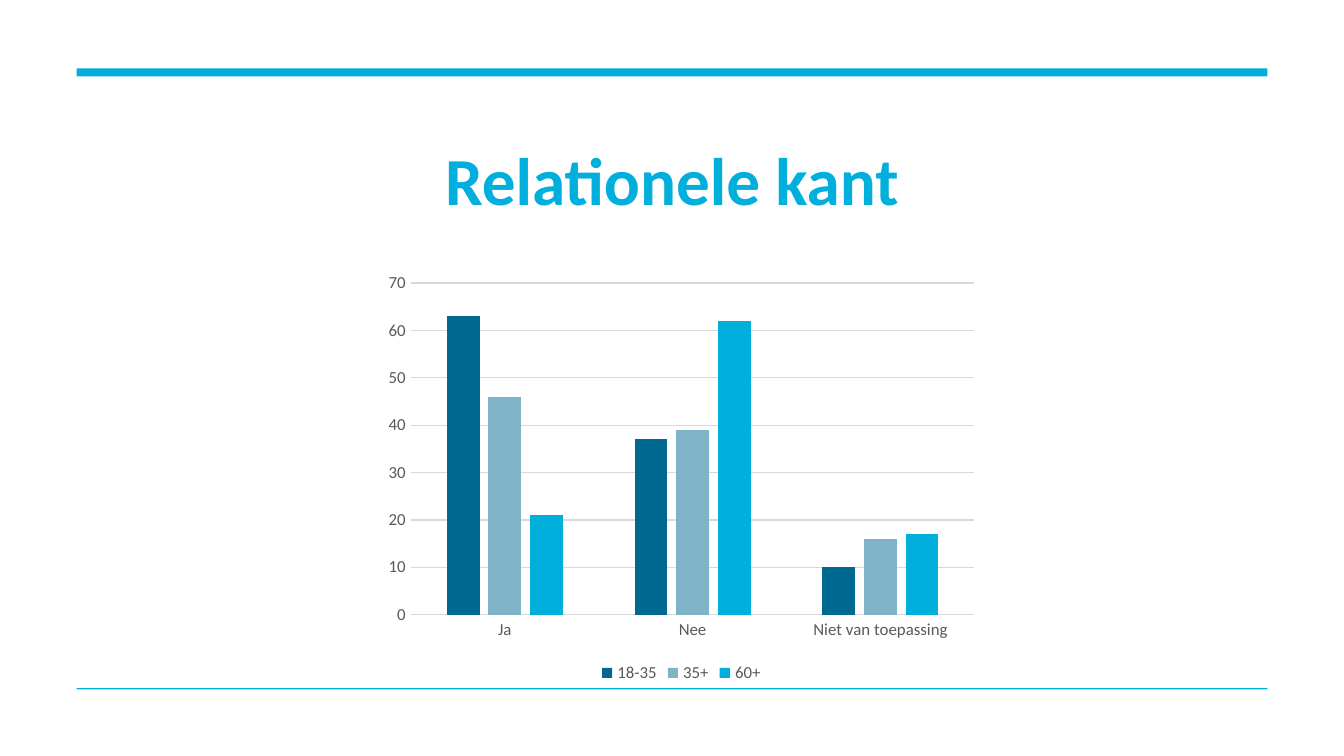
"""Build a slide with a title and a clustered column chart."""
import pptx
import pptx.chart.data
import pptx.dml.color
import pptx.enum.chart
import pptx.enum.shapes
import pptx.enum.text
import pptx.util

Inches = pptx.util.Inches
Pt = pptx.util.Pt


def rgb(value):
    """Return the colour for a hex string."""
    return pptx.dml.color.RGBColor.from_string(value)


def assign(obj, values):
    """Set every attribute named in a dict of format values."""
    for name, value in values.items():
        setattr(obj, name, value)


class Deck:
    """Hold the style and the current slide."""

    accent = "00AFDC"
    label = "595959"
    rule = "D9D9D9"
    font = "Calibri"
    left, width = 0.57, 8.86

    def __init__(self, prs):
        """Add a slide with only a title."""
        self.s = prs.slides.add_slide(prs.slide_layouts[5])

    def style_font(self, font, size, color, bold=False):
        """Format a font."""
        assign(font, {"name": self.font, "size": Pt(size), "bold": bold})
        font.color.rgb = rgb(color)

    def style_line(self, line):
        """Format a chart line."""
        line.color.rgb = rgb(self.rule)
        line.width = Pt(0.75)

    def bar(self, top, height):
        """Draw a full-width bar."""
        sp = self.s.shapes.add_shape(
            pptx.enum.shapes.MSO_SHAPE.RECTANGLE,
            Inches(self.left), Inches(top), Inches(self.width), Inches(height))
        sp.shadow.inherit = False
        sp.fill.solid()
        sp.fill.fore_color.rgb = rgb(self.accent)
        sp.line.fill.background()

    def title(self, text, top, height):
        """Fill and place the title placeholder."""
        sp = self.s.shapes.title
        assign(sp, {"left": Inches(self.left), "top": Inches(top),
                    "width": Inches(self.width), "height": Inches(height)})
        tf = sp.text_frame
        assign(tf, {"margin_left": 0, "margin_top": 0, "margin_right": 0,
                    "margin_bottom": 0, "word_wrap": True,
                    "vertical_anchor": pptx.enum.text.MSO_ANCHOR.MIDDLE})
        p = tf.paragraphs[0]
        assign(p, {"alignment": pptx.enum.text.PP_ALIGN.CENTER,
                   "line_spacing": Pt(42)})
        r = p.add_run()
        r.text = text
        self.style_font(r.font, 36, self.accent, True)

    def columns(self, categories, series, left, top, width, height):
        """Add a clustered column chart."""
        data = pptx.chart.data.CategoryChartData()
        data.categories = categories
        for name, values, _ in series:
            data.add_series(name, values)
        chart = self.s.shapes.add_chart(
            pptx.enum.chart.XL_CHART_TYPE.COLUMN_CLUSTERED,
            Inches(left), Inches(top), Inches(width), Inches(height), data).chart
        assign(chart, {"has_title": False, "has_legend": True})
        self.style_font(chart.font, 10, "000000")
        assign(chart.legend, {
            "position": pptx.enum.chart.XL_LEGEND_POSITION.BOTTOM,
            "include_in_layout": False})
        self.style_font(chart.legend.font, 9, self.label)
        plot = chart.plots[0]
        assign(plot, {"gap_width": 219, "overlap": -27, "vary_by_categories": False})
        for item, (_, _, color) in zip(plot.series, series):
            item.format.fill.solid()
            item.format.fill.fore_color.rgb = rgb(color)
        none = pptx.enum.chart.XL_TICK_MARK.NONE
        for axis in (chart.category_axis, chart.value_axis):
            assign(axis, {"major_tick_mark": none, "minor_tick_mark": none})
            self.style_font(axis.tick_labels.font, 9, self.label)
        self.style_line(chart.category_axis.format.line)
        axis = chart.value_axis
        assign(axis, {"minimum_scale": 0, "maximum_scale": 70, "major_unit": 10})
        axis.format.line.fill.background()
        self.style_line(axis.major_gridlines.format.line)


def main():
    """Create and save the presentation."""
    prs = pptx.Presentation()
    assign(prs, {"slide_width": Inches(10), "slide_height": Inches(10) * 9 // 16})
    deck = Deck(prs)
    deck.bar(0.51, 0.06)
    deck.bar(5.12, 0.01)
    deck.title("Relationele kant", 0.86, 0.95)
    deck.columns(
        ["Ja", "Nee", "Niet van toepassing"],
        [("18-35", (63, 37, 10), "006991"),
         ("35+", (46, 39, 16), "7FB4C8"),
         ("60+", (21, 62, 17), deck.accent)],
        2.8, 1.97, 4.54, 3.15)
    prs.save("out.pptx")


if __name__ == "__main__":
    main()
